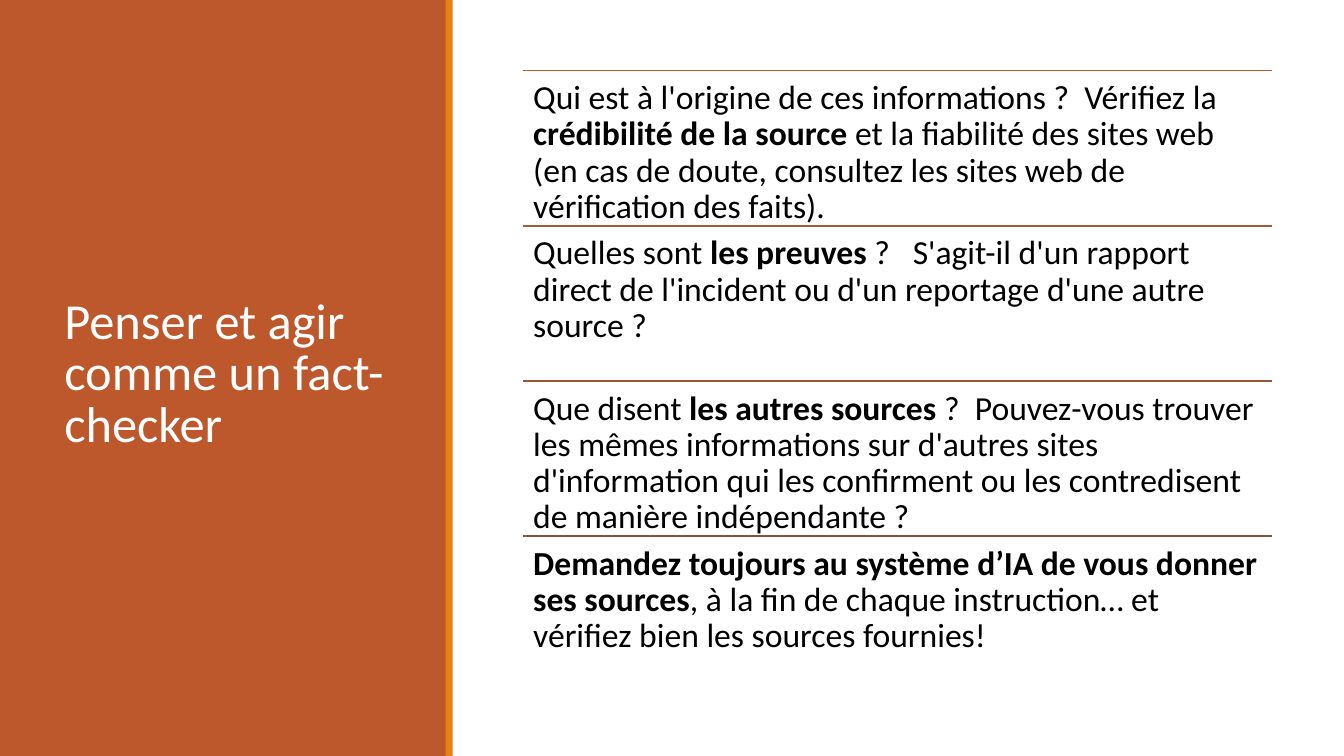
from pptx import Presentation
from pptx.dml.color import RGBColor
from pptx.enum.shapes import MSO_CONNECTOR, MSO_SHAPE
from pptx.enum.text import MSO_ANCHOR
from pptx.oxml.ns import qn
from pptx.util import Pt
from lxml.etree import SubElement

PX = 9144
colors = {"rust": "BD582C", "amber": "E48312", "white": "FFFFFF", "black": "000000"}

deck = Presentation()
deck.slide_width, deck.slide_height = 1333 * PX, 750 * PX
slide = deck.slides.add_slide(deck.slide_layouts[6])
shapes = slide.shapes


def add_text(box, runs, size, color, spacing, inset, anchor):
    frame = shapes.add_textbox(*[n * PX for n in box]).text_frame
    layout = {
        "word_wrap": True,
        "vertical_anchor": anchor,
        "margin_left": 10 * PX,
        "margin_right": 10 * PX,
        "margin_top": inset * PX,
        "margin_bottom": inset * PX,
    }
    for key, value in layout.items():
        setattr(frame, key, value)
    para = frame.paragraphs[0]
    para.line_spacing = spacing
    for text, bold in runs:
        run = para.add_run()
        run.text = text
        style = {"name": "Calibri", "size": Pt(size), "bold": bold}
        for key, value in style.items():
            setattr(run.font, key, value)
        run.font.color.rgb = RGBColor.from_string(colors[color])


for left, width, color in [(0, 443, "rust"), (442, 7, "amber")]:
    panel = shapes.add_shape(MSO_SHAPE.RECTANGLE, left * PX, 0, width * PX, 750 * PX)
    panel.shadow.inherit = False
    panel.fill.solid()
    panel.fill.fore_color.rgb = RGBColor.from_string(colors[color])
    panel.line.fill.background()

title = [("Penser et agir comme un fact-checker", False)]
add_text((54, 57, 337, 631), title, 36, "white", 0.85, 5, MSO_ANCHOR.MIDDLE)

left, top, width, height = 519, 70, 743, 154
steps = [
    ("BB582B", [
        ("Qui est à l'origine de ces informations ?  Vérifiez la ", False),
        ("crédibilité de la source ", True),
        ("et la fiabilité des sites web (en cas de doute, consultez les sites web "
         "de vérification des faits).", False),
    ]),
    ("A85733", [
        ("Quelles sont ", False),
        ("les preuves ", True),
        ("?   S'agit-il d'un rapport direct de l'incident ou d'un reportage "
         "d'une autre source ?", False),
    ]),
    ("965639", [
        ("Que disent ", False),
        ("les autres sources ", True),
        ("?  Pouvez-vous trouver les mêmes informations sur d'autres sites "
         "d'information qui les confirment ou les contredisent de manière "
         "indépendante ?", False),
    ]),
    ("84543F", [
        ("Demandez toujours au système d’IA de vous donner ses sources", True),
        (", à la fin de chaque instruction… et vérifiez bien les sources "
         "fournies!", False),
    ]),
]

for row, (color, runs) in enumerate(steps):
    y = top + row * height
    rule = shapes.add_connector(
        MSO_CONNECTOR.STRAIGHT, left * PX, y * PX, (left + width) * PX, y * PX)
    rule.line.color.rgb = RGBColor.from_string(color)
    rule.line.width = Pt(1.25)
    SubElement(rule.element.spPr, qn("a:effectLst"))
    add_text((left, y, width, height), runs, 24, "black", 0.9, 10, MSO_ANCHOR.TOP)

deck.save("out.pptx")
